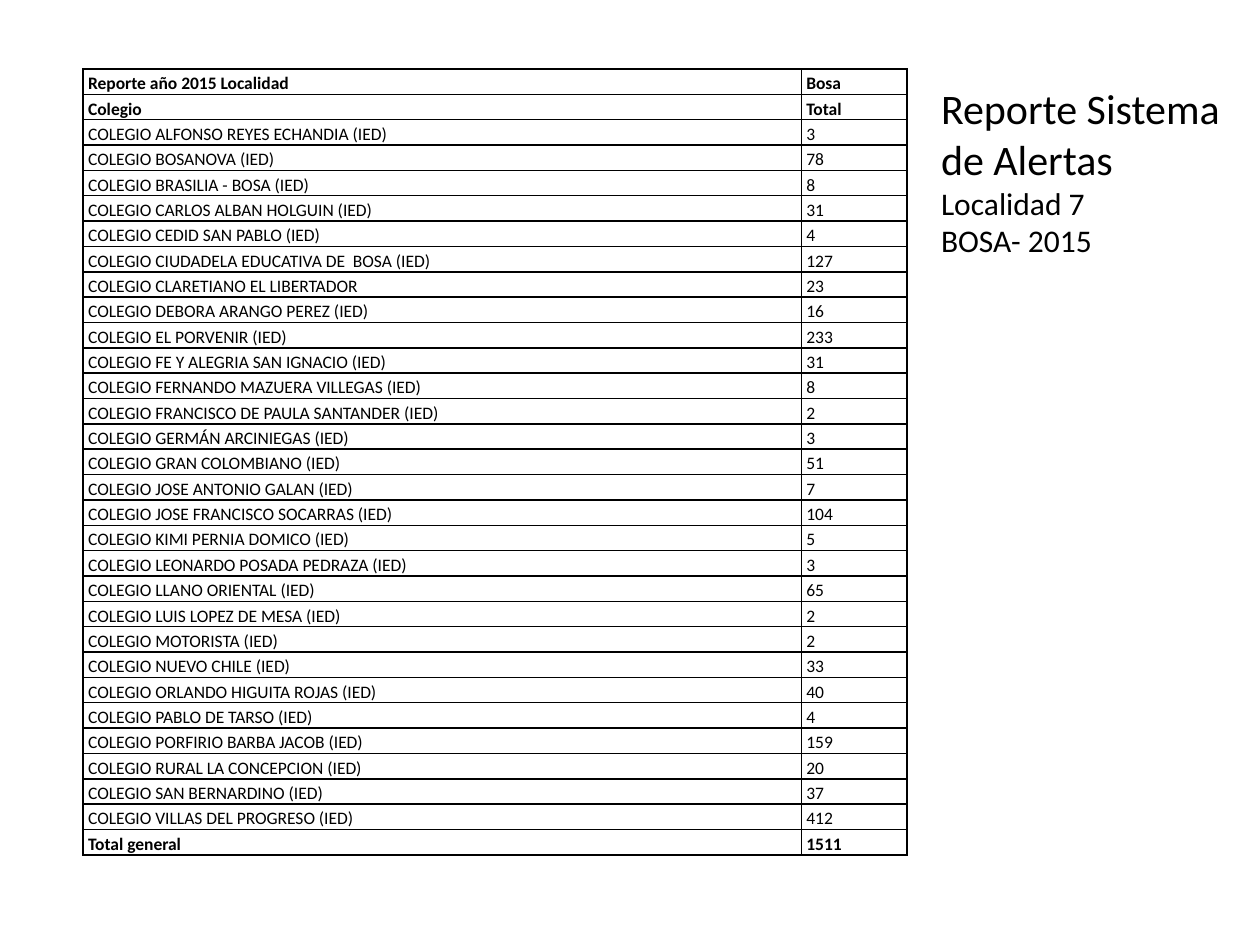
from pptx import Presentation
from pptx import util as u
from pptx.dml.color import RGBColor
from pptx.enum import text
from pptx.oxml.ns import qn
from lxml import etree

COLORS = {"ink": "000000", "paper": "FFFFFF"}
FONT = "Calibri"
WIDTH, HEIGHT = u.Inches(10), u.Inches(7.5)
TABLE_LEFT, TABLE_TOP = 0.066, 0.073
TABLE_WIDTH, TABLE_HEIGHT = 0.654, 0.832
COLUMN_SHARES = (0.57, 0.084)

HEADINGS = [("Reporte año 2015 Localidad", "Bosa"), ("Colegio", "Total")]
SCHOOLS = [
    ("COLEGIO ALFONSO REYES ECHANDIA (IED)", 3),
    ("COLEGIO BOSANOVA (IED)", 78),
    ("COLEGIO BRASILIA - BOSA (IED)", 8),
    ("COLEGIO CARLOS ALBAN HOLGUIN (IED)", 31),
    ("COLEGIO CEDID SAN PABLO (IED)", 4),
    ("COLEGIO CIUDADELA EDUCATIVA DE  BOSA (IED)", 127),
    ("COLEGIO CLARETIANO EL LIBERTADOR", 23),
    ("COLEGIO DEBORA ARANGO PEREZ (IED)", 16),
    ("COLEGIO EL PORVENIR (IED)", 233),
    ("COLEGIO FE Y ALEGRIA SAN IGNACIO (IED)", 31),
    ("COLEGIO FERNANDO MAZUERA VILLEGAS (IED)", 8),
    ("COLEGIO FRANCISCO DE PAULA SANTANDER (IED)", 2),
    ("COLEGIO GERMÁN ARCINIEGAS (IED)", 3),
    ("COLEGIO GRAN COLOMBIANO (IED)", 51),
    ("COLEGIO JOSE ANTONIO GALAN (IED)", 7),
    ("COLEGIO JOSE FRANCISCO SOCARRAS (IED)", 104),
    ("COLEGIO KIMI PERNIA DOMICO (IED)", 5),
    ("COLEGIO LEONARDO POSADA PEDRAZA (IED)", 3),
    ("COLEGIO LLANO ORIENTAL (IED)", 65),
    ("COLEGIO LUIS LOPEZ DE MESA (IED)", 2),
    ("COLEGIO MOTORISTA (IED)", 2),
    ("COLEGIO NUEVO CHILE (IED)", 33),
    ("COLEGIO ORLANDO HIGUITA ROJAS (IED)", 40),
    ("COLEGIO PABLO DE TARSO (IED)", 4),
    ("COLEGIO PORFIRIO BARBA JACOB (IED)", 159),
    ("COLEGIO RURAL LA CONCEPCION (IED)", 20),
    ("COLEGIO SAN BERNARDINO (IED)", 37),
    ("COLEGIO VILLAS DEL PROGRESO (IED)", 412),
]
GRAND_TOTAL = ("Total general", 1511)
TITLE_LINES = [("Reporte Sistema", 24), ("de Alertas", 24),
               ("Localidad 7", 18), ("BOSA- 2015", 18)]


def across(share):
    return round(WIDTH * share)


def down(share):
    return round(HEIGHT * share)


def add_span(para, words, size, bold=False):
    span = para.add_run()
    span.text = words
    span.font.name = FONT
    span.font.size = u.Pt(size)
    span.font.bold = bold
    span.font.color.rgb = RGBColor.from_string(COLORS["ink"])


def add_borders(cell):
    properties = cell._tc.get_or_add_tcPr()
    for side in ("lnL", "lnR", "lnT", "lnB"):
        line = etree.SubElement(properties, qn(f"a:{side}"), w=str(u.Pt(1)))
        fill = etree.SubElement(line, qn("a:solidFill"))
        etree.SubElement(fill, qn("a:srgbClr"), val=COLORS["ink"])


def fill_cell(cell, words, bold):
    add_borders(cell)
    cell.fill.solid()
    cell.fill.fore_color.rgb = RGBColor.from_string(COLORS["paper"])
    cell.vertical_anchor = text.MSO_ANCHOR.BOTTOM
    cell.margin_left = cell.margin_right = u.Inches(0.04)
    cell.margin_top = cell.margin_bottom = 0
    add_span(cell.text_frame.paragraphs[0], words, 10, bold)


def add_school_table(page):
    rows = HEADINGS + SCHOOLS + [GRAND_TOTAL]
    table = page.shapes.add_table(
        len(rows), len(COLUMN_SHARES), across(TABLE_LEFT), down(TABLE_TOP),
        across(TABLE_WIDTH), down(TABLE_HEIGHT)).table
    table.first_row = table.horz_banding = False
    for column, share in zip(table.columns, COLUMN_SHARES):
        column.width = across(share)
    for index, (row, values) in enumerate(zip(table.rows, rows)):
        row.height = down(TABLE_HEIGHT / len(rows))
        bold = index < len(HEADINGS) or index == len(rows) - 1
        for cell, value in zip(row.cells, values):
            fill_cell(cell, str(value), bold)


def add_title(page):
    box = page.shapes.add_textbox(across(0.737), down(0.081),
                                  across(0.251), down(0.201))
    frame = box.text_frame
    frame.word_wrap = False
    frame.auto_size = text.MSO_AUTO_SIZE.SHAPE_TO_FIT_TEXT
    for index, (words, size) in enumerate(TITLE_LINES):
        para = frame.add_paragraph() if index else frame.paragraphs[0]
        add_span(para, words, size)


def main():
    deck = Presentation()
    deck.slide_width, deck.slide_height = WIDTH, HEIGHT
    page = deck.slides.add_slide(deck.slide_layouts[6])
    add_school_table(page)
    add_title(page)
    deck.save("out.pptx")


if __name__ == "__main__":
    main()
